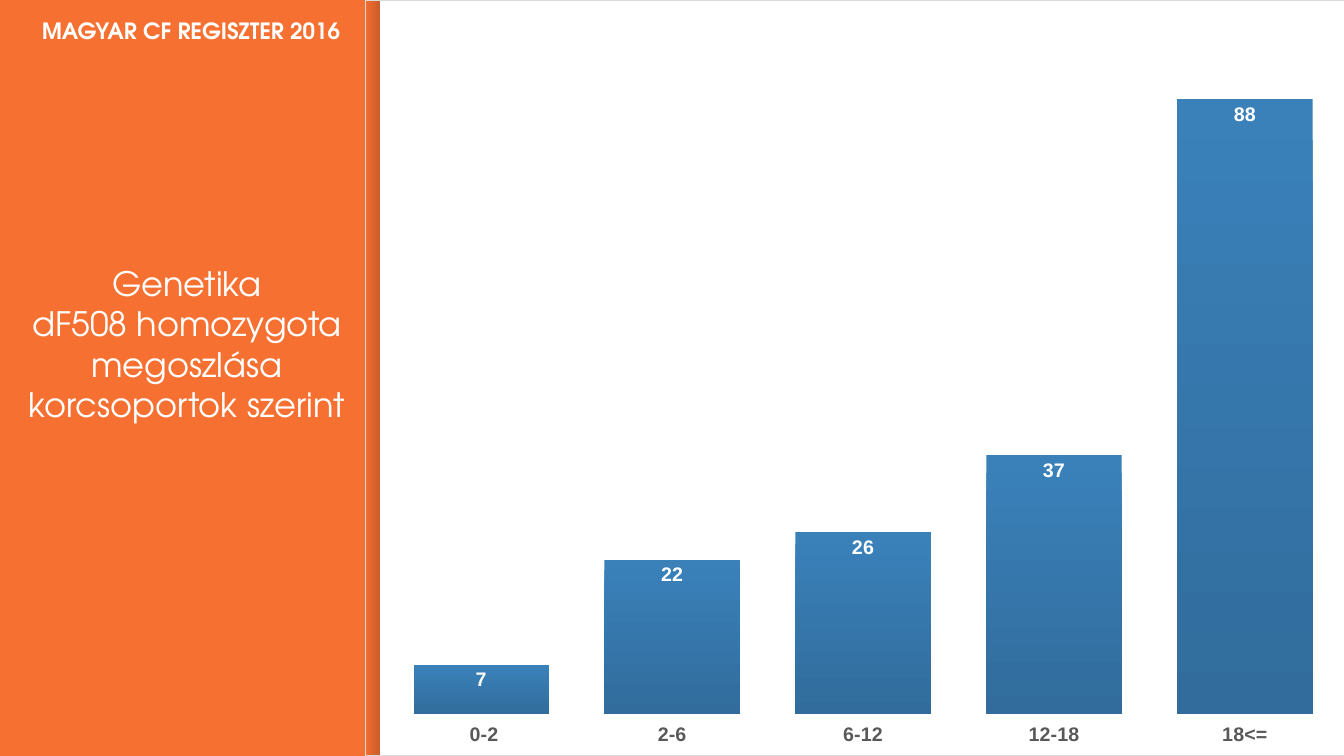
from lxml.etree import SubElement
from pptx import Presentation
from pptx.chart.data import CategoryChartData
from pptx.dml.color import RGBColor
from pptx.enum.chart import XL_CHART_TYPE, XL_LABEL_POSITION, XL_TICK_LABEL_POSITION, XL_TICK_MARK
from pptx.enum.shapes import MSO_SHAPE
from pptx.enum.text import PP_ALIGN
from pptx.oxml import parse_xml
from pptx.oxml.ns import nsdecls, qn
from pptx.util import Emu, Pt

PX = 9525


def px(*lengths):
    return [Emu(n * PX) for n in lengths]


def rgb(color):
    return RGBColor.from_string(color)


class Deck:
    heading_font = "TeX Gyre Adventor"
    chart_font = "Arial"
    white = "FFFFFF"
    orange = "F67031"
    grey = "595959"
    border = "D9D9D9"
    bar_colors = ("3A81BA", "316C9C")

    def __init__(self):
        self.prs = Presentation()
        self.prs.slide_width, self.prs.slide_height = px(1280, 720)
        self.s = self.prs.slides.add_slide(self.prs.slide_layouts[6])
        fill = self.s.background.fill
        fill.solid()
        fill.fore_color.rgb = rgb(self.orange)

    def gradient(self, fill, colors, angle):
        fill.gradient()
        fill.gradient_angle = angle
        for stop, color in zip(fill.gradient_stops, colors):
            stop.color.rgb = rgb(color)

    def rect(self, *box):
        sp = self.s.shapes.add_shape(MSO_SHAPE.RECTANGLE, *px(*box))
        sp.shadow.inherit = False
        sp.line.fill.background()
        return sp

    def panel(self, *box):
        sp = self.rect(*box)
        sp.fill.solid()
        sp.fill.fore_color.rgb = rgb(self.white)

    def shade(self, *box):
        sp = self.rect(*box)
        self.gradient(sp.fill, ("000014", "000014"), 0)
        colors = sp._element.spPr.findall(".//" + qn("a:srgbClr"))
        for color, alpha in zip(colors, (0, 20000)):
            SubElement(color, qn("a:alpha")).set("val", str(alpha))

    def text(self, box, lines, size, bold=False, inset=10, spacing=None):
        tf = self.s.shapes.add_textbox(*px(*box)).text_frame
        tf.word_wrap = True
        tf.margin_left, tf.margin_right = px(inset, inset)
        p = tf.paragraphs[0]
        p.alignment = PP_ALIGN.CENTER
        if spacing:
            tf.margin_top, tf.margin_bottom = px(inset, inset)
            p.line_spacing = Pt(spacing)
        for i, line in enumerate(lines):
            if i:
                p.add_line_break()
            r = p.add_run()
            r.text = line
            self.style(r.font, self.heading_font, size, self.white, bold)

    def style(self, font, name, size, color, bold):
        font.name, font.size, font.bold = name, Pt(size), bold
        font.color.rgb = rgb(color)

    def column_chart(self, box, categories, values):
        data = CategoryChartData()
        data.categories = categories
        data.add_series("Series 1", values)
        chart = self.s.shapes.add_chart(XL_CHART_TYPE.COLUMN_CLUSTERED, *px(*box), data).chart
        chart.has_title = chart.has_legend = False
        self.style(chart.font, self.chart_font, 10, "000000", False)

        axis = chart.category_axis
        axis.major_tick_mark = axis.minor_tick_mark = XL_TICK_MARK.NONE
        axis.tick_label_position = XL_TICK_LABEL_POSITION.LOW
        axis.format.line.fill.background()
        self.style(axis.tick_labels.font, self.chart_font, 14, self.grey, True)
        axis = chart.value_axis
        axis.minimum_scale, axis.maximum_scale = 0, 100
        axis.has_major_gridlines = False
        axis.visible = False

        plot = chart.plots[0]
        plot.gap_width = 41
        plot.vary_by_categories = False
        series = plot.series[0]
        self.gradient(series.format.fill, self.bar_colors, 270)
        labels = series.data_labels
        labels.show_value = True
        labels.position = XL_LABEL_POSITION.INSIDE_END
        self.style(labels.font, self.chart_font, 14, self.white, True)
        self.frame(chart)

    def frame(self, chart):
        root = chart._chartSpace
        root.find(qn("c:chart")).addnext(parse_xml(
            f'<c:spPr {nsdecls("c", "a")}><a:noFill/><a:ln w="{Pt(0.75)}"><a:solidFill>'
            f'<a:srgbClr val="{self.border}"/></a:solidFill></a:ln></c:spPr>'))
        area = root.find(".//" + qn("c:plotArea"))
        for old in area.findall(qn("c:layout")):
            area.remove(old)
        layout = SubElement(area, qn("c:layout"))
        area.insert(0, layout)
        manual = SubElement(layout, qn("c:manualLayout"))
        settings = dict(layoutTarget="inner", xMode="edge", yMode="edge",
                        x=0.02, y=0.02, w=0.96, h=0.925)
        for tag, value in settings.items():
            SubElement(manual, qn("c:" + tag)).set("val", str(value))


def main():
    deck = Deck()
    deck.shade(347, 0, 15, 720)
    deck.panel(362, 0, 918, 720)
    deck.text((15, 240, 326, 108), ["Genetika", "dF508 homozygota megoszlása korcsoportok szerint"],
              24, spacing=28.9)
    deck.text((0, 12, 364, 36), ["MAGYAR CF REGISZTER 2016"], 16, bold=True)
    deck.column_chart((348, 0, 948, 720), [" 0-2", "2-6", "6-12", "12-18", "18<="],
                      [7, 22, 26, 37, 88])
    deck.prs.save("out.pptx")


if __name__ == "__main__":
    main()
